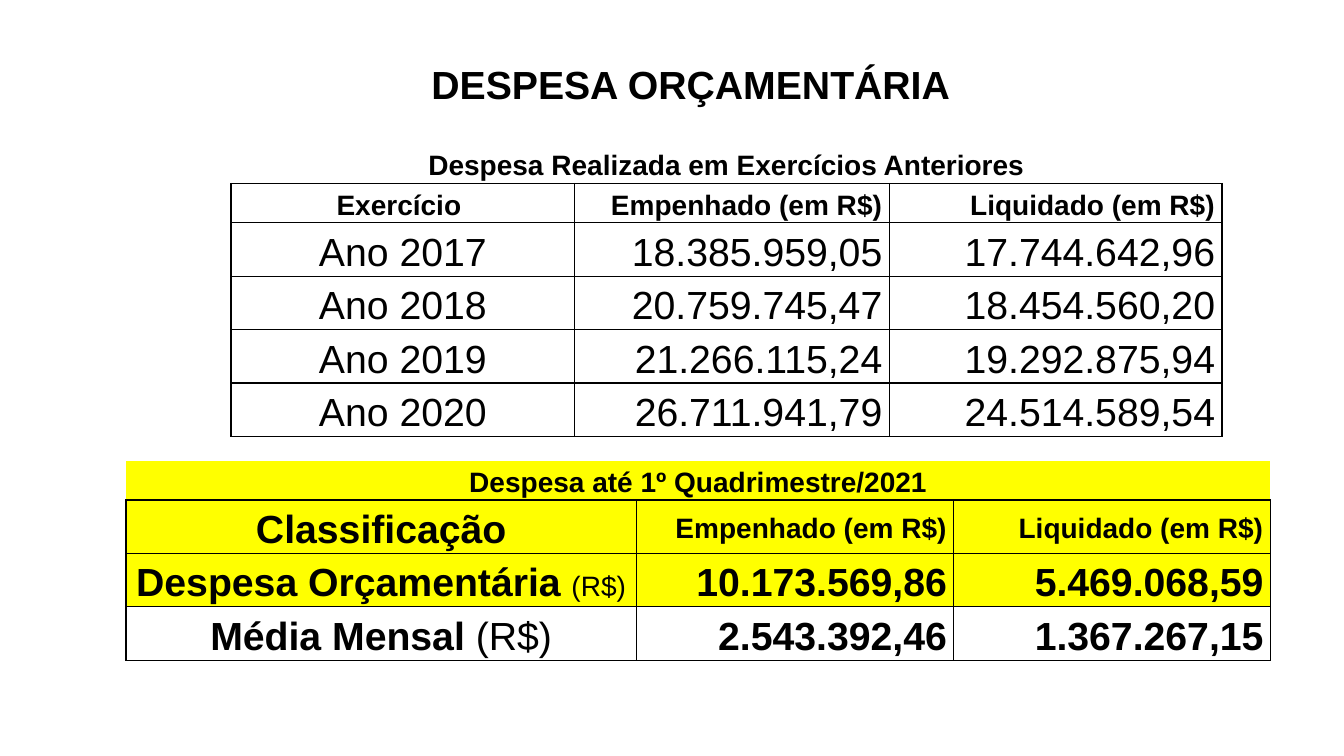
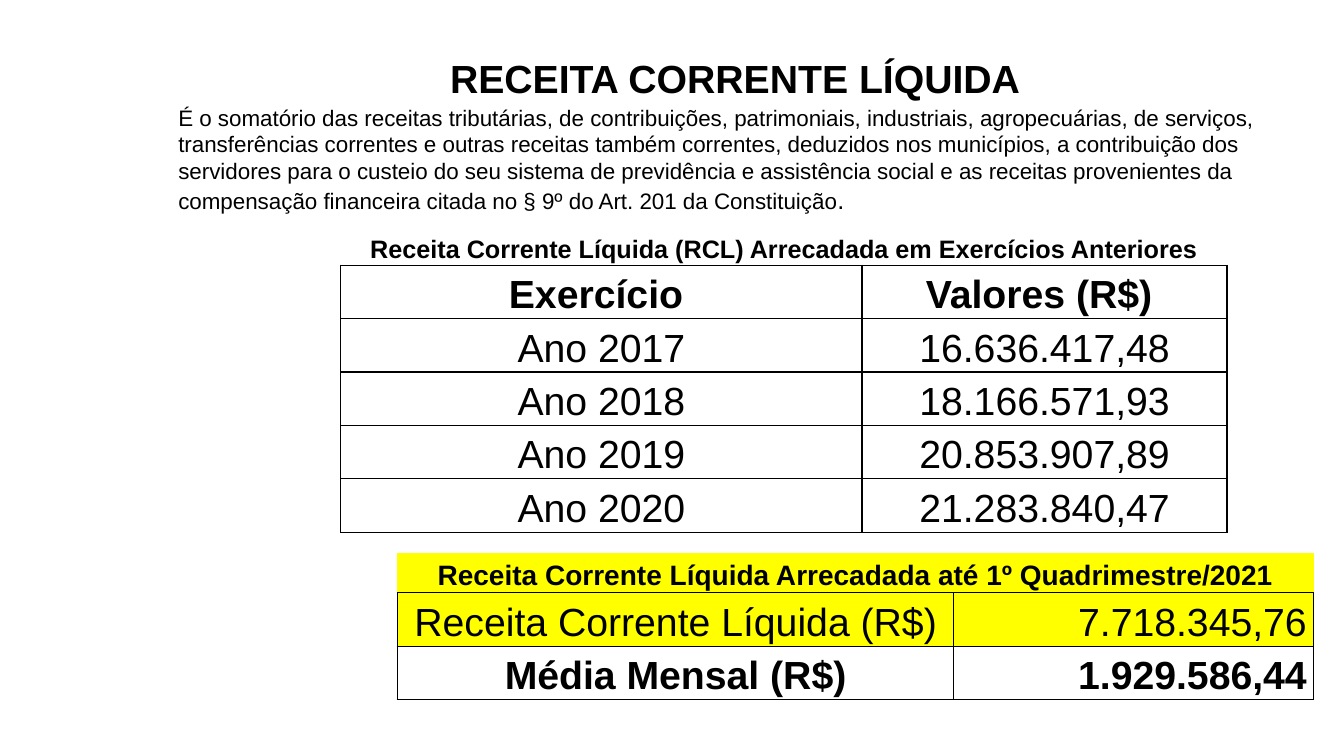
from lxml.etree import SubElement as Sub
from pptx import Presentation
from pptx.dml.color import RGBColor
from pptx.enum.text import MSO_ANCHOR as Anchor, MSO_AUTO_SIZE as Auto, PP_ALIGN as Align
from pptx.oxml.ns import qn
from pptx.util import Inches, Pt

FONT, INK, WHITE, YELLOW = "Arial", "000000", "FFFFFF", "FFFF00"
HEIGHTS = {18: 0.35, 20: 0.39, 28: 0.53}  # row height by text size
MID, RIGHT = Align.CENTER, Align.RIGHT

# A text is a string or a list of (string, format) runs.
# A table row is (cells, size, bold, fill); the caption spans all columns.
SLIDES = [
    {
        "title": ("DESPESA ORÇAMENTÁRIA", (1.1, 0.14)),
        "tables": [
            {
                "at": (1.25, 4.57), "cols": [5.06, 3.15, 3.14], "align": RIGHT,
                "caption": ("Despesa até 1º Quadrimestre/2021", 20, YELLOW),
                "rows": [
                    (["Classificação",
                      [("Empenhado (em R$)", {"size": 20})],
                      [("Liquidado (em R$)", {"size": 20})]], 28, True, YELLOW),
                    ([[("Despesa Orçamentária ", {}), ("(R$)", {"size": 20, "bold": False})],
                      "10.173.569,86", "5.469.068,59"], 28, True, YELLOW),
                    ([[("Média Mensal ", {}), ("(R$)", {"bold": False})],
                      "2.543.392,46", "1.367.267,15"], 28, True, WHITE),
                ],
            },
            {
                "at": (2.29, 1.43), "cols": [3.41, 3.12, 3.3], "align": RIGHT,
                "caption": ("Despesa Realizada em Exercícios Anteriores", 20, None),
                "rows": [
                    (["Exercício ", "Empenhado (em R$)", "Liquidado (em R$)"], 20, True, None),
                    (["Ano 2017", "18.385.959,05", "17.744.642,96"], 28, False, None),
                    (["Ano 2018", "20.759.745,47", "18.454.560,20"], 28, False, None),
                    (["Ano 2019", "21.266.115,24", "19.292.875,94"], 28, False, None),
                    (["Ano 2020", "26.711.941,79", "24.514.589,54"], 28, False, None),
                ],
            },
        ],
    },
    {
        "title": ("RECEITA CORRENTE LÍQUIDA", (1.54, 0.08)),
        "note": [
            ("É o somatório das receitas tributárias, de contribuições, patrimoniais, "
             "industriais, agropecuárias, de serviços, transferências correntes e outras "
             "receitas também correntes, deduzidos nos municípios, a contribuição dos "
             "servidores para o custeio do seu sistema de previdência e assistência social "
             "e as receitas provenientes da compensação financeira citada no § 9º do "
             "Art. 201 da Constituição", {}),
            (".", {"size": 18}),
        ],
        "tables": [
            {
                "at": (3.38, 2.28), "cols": [5.17, 3.62], "align": MID,
                "caption": ("Receita Corrente Líquida (RCL) Arrecadada em Exercícios Anteriores",
                            18, None),
                "rows": [
                    (["Exercício ", "Valores (R$) "], 28, True, None),
                    (["Ano 2017", "16.636.417,48"], 28, False, None),
                    (["Ano 2018", "18.166.571,93"], 28, False, None),
                    (["Ano 2019", "20.853.907,89"], 28, False, None),
                    (["Ano 2020", "21.283.840,47"], 28, False, None),
                ],
            },
            {
                "at": (3.94, 5.49), "cols": [5.52, 3.57], "align": RIGHT,
                "caption": ("Receita Corrente Líquida Arrecadada até 1º Quadrimestre/2021",
                            20, YELLOW),
                "rows": [
                    (["Receita Corrente Líquida (R$)", "7.718.345,76"], 28, False, YELLOW),
                    (["Média Mensal (R$)", "1.929.586,44"], 28, True, WHITE),
                ],
            },
        ],
    },
]


def color(code):
    return RGBColor.from_string(code)


def write(frame, text, size=28, bold=False, align=Align.LEFT, lines=1.0):
    para = frame.paragraphs[0]
    para.alignment, para.line_spacing = align, lines
    runs = [(text, {})] if isinstance(text, str) else text
    for words, style in runs:
        run = para.add_run()
        run.text = words
        font = run.font
        font.name, font.color.rgb = FONT, color(INK)
        font.size = Pt(style.get("size", size))
        font.bold = style.get("bold", bold)


def edge(cell, sides):
    """Draw the borders named in sides and clear the others."""
    props = cell._tc.get_or_add_tcPr()
    for side in "LRTB":
        line = Sub(props, qn(f"a:ln{side}"), w=str(Pt(1)))
        if side in sides:
            Sub(Sub(line, qn("a:solidFill")), qn("a:srgbClr"), val=INK)
        else:
            Sub(line, qn("a:noFill"))


def style_cell(cell, fill, sides):
    edge(cell, sides)
    if fill:
        cell.fill.solid()
        cell.fill.fore_color.rgb = color(fill)
    else:
        cell.fill.background()
    cell.vertical_anchor = Anchor.MIDDLE
    cell.margin_left = cell.margin_right = Inches(0.07)
    cell.margin_top = cell.margin_bottom = Inches(0.01)


def add_grid(slide, at, cols, align, caption, rows):
    head, size, fill = caption
    rows = [([head], size, True, fill)] + rows
    tall = [HEIGHTS[row[1]] for row in rows]
    box = [Inches(n) for n in (*at, sum(cols), sum(tall))]
    grid = slide.shapes.add_table(len(rows), len(cols), *box).table
    grid.first_row = grid.horz_banding = False
    for col, width in zip(grid.columns, cols):
        col.width = Inches(width)
    for row, height in zip(grid.rows, tall):
        row.height = Inches(height)
    for r, (texts, size, bold, fill) in enumerate(rows):
        for c in range(len(cols)):
            style_cell(grid.cell(r, c), fill, "LRTB" if r else "B")
        for c, text in enumerate(texts):
            write(grid.cell(r, c).text_frame, text, size=size, bold=bold,
                  align=align if c else MID, lines=1.15)
    grid.cell(0, 0).merge(grid.cell(0, len(cols) - 1))


def add_title(slide, text, at):
    title = slide.shapes.title
    title.left, title.top = (Inches(n) for n in at)
    title.width, title.height = Inches(11.5), Inches(1.45)
    frame = title.text_frame
    frame.auto_size, frame.vertical_anchor = Auto.NONE, Anchor.MIDDLE
    write(frame, text, bold=True, align=MID, lines=0.9)


def add_note(slide, text):
    box = [Inches(n) for n in (1.67, 0.98, 11.66, 1.25)]
    frame = slide.shapes.add_textbox(*box).text_frame
    frame.word_wrap = True
    write(frame, text, size=16)


def main():
    deck = Presentation()
    deck.slide_width, deck.slide_height = Inches(13.33), Inches(7.5)
    for page in SLIDES:
        slide = deck.slides.add_slide(deck.slide_layouts[5])
        add_title(slide, *page["title"])
        for table in page["tables"]:
            add_grid(slide, **table)
        if "note" in page:
            add_note(slide, page["note"])
    deck.save("out.pptx")


if __name__ == "__main__":
    main()
